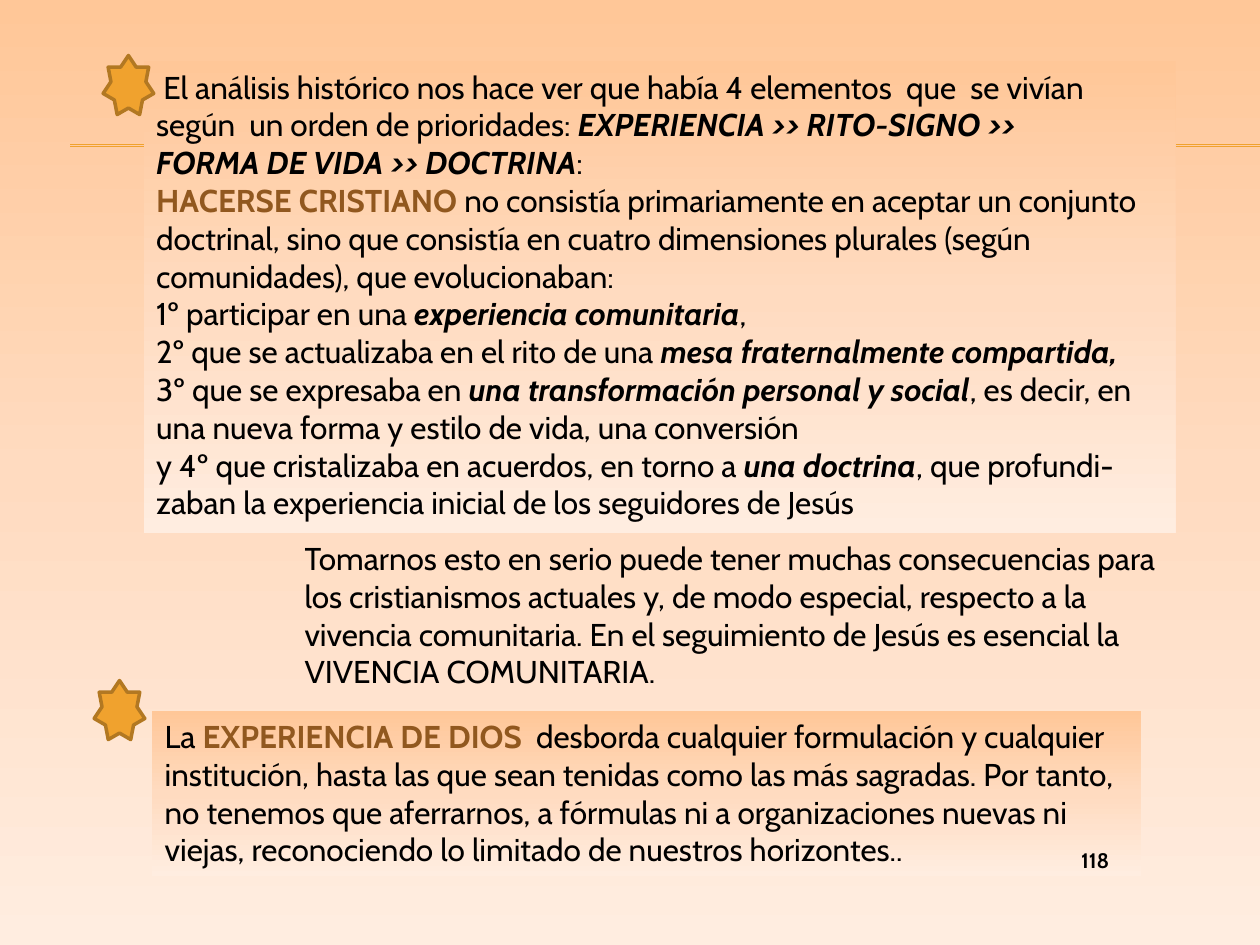
from copy import deepcopy
from dataclasses import dataclass, field

from lxml import etree
from pptx import Presentation
from pptx.dml.color import RGBColor
from pptx.enum import shapes as es, text as et
from pptx.oxml.ns import qn
from pptx.util import Cm, Pt

INK = {"text": "000000", "key": "91581F", "gold": "F0A22E", "edge": "B27822"}
FADE = {0: "FFC798", 0.5: "FFDBC0", 1: "FFEDE0"}


@dataclass
class Run:
    text: str
    form: dict = field(default_factory=dict)


@dataclass
class Box:
    left: float
    top: float
    width: float
    height: float
    paras: list
    fade: bool = False
    align: et.PP_ALIGN = et.PP_ALIGN.LEFT
    grow: bool = True


def rgb(name: str) -> RGBColor:
    return RGBColor.from_string(INK[name])


def strong(text: str) -> Run:
    return Run(text, {"bold": True, "italic": True})


def key(text: str) -> Run:
    return Run(text, {"bold": True, "tint": "key"})


def say(para, text: str, *, size=18, bold=False, italic=False, tint="text") -> None:
    run = para.add_run()
    run.text = text
    font = run.font
    font.name, font.size = "Cabin", Pt(size)
    font.bold, font.italic = bold, italic
    font.color.rgb = rgb(tint)


def blend(fill, node) -> None:
    fill.gradient()
    fill.gradient_angle = 270
    stops = next(node.iter(qn("a:gsLst")))
    stops.insert(1, deepcopy(stops[0]))
    for stop, (spot, tone) in zip(fill.gradient_stops, FADE.items()):
        stop.position = spot
        stop.color.rgb = RGBColor.from_string(tone)


def rule(slide, top: float) -> None:
    line = slide.shapes.add_connector(
        es.MSO_CONNECTOR.STRAIGHT, Cm(1.42), Cm(top), Cm(25.4), Cm(top))
    line.line.color.rgb = rgb("gold")
    line.line.width = Pt(0.75)
    etree.SubElement(line._element.spPr, qn("a:effectLst"))


def star(slide, left: float, top: float) -> None:
    shape = slide.shapes.add_shape(
        es.MSO_SHAPE.STAR_7_POINT, Cm(left), Cm(top), Cm(1.02), Cm(1.19))
    shape.shadow.inherit = False
    shape.fill.solid()
    shape.fill.fore_color.rgb = rgb("gold")
    shape.line.color.rgb = rgb("edge")
    shape.line.width = Pt(2)


def draw(slide, box: Box) -> None:
    area = [Cm(n) for n in (box.left, box.top, box.width, box.height)]
    if box.fade:
        shape = slide.shapes.add_shape(es.MSO_SHAPE.RECTANGLE, *area)
        shape.shadow.inherit = False
        blend(shape.fill, shape._element.spPr)
        shape.line.fill.background()
    else:
        shape = slide.shapes.add_textbox(*area)
    frame = shape.text_frame
    frame.word_wrap = True
    frame.vertical_anchor = et.MSO_ANCHOR.TOP
    if box.grow:
        frame.auto_size = et.MSO_AUTO_SIZE.SHAPE_TO_FIT_TEXT
    for num, runs in enumerate(box.paras):
        para = frame.add_paragraph() if num else frame.paragraphs[0]
        para.alignment = box.align
        for run in runs:
            say(para, run.text, **run.form)


ORDER = Box(2.9, 1.24, 20.8, 9.5, [
    [Run(" El análisis histórico nos hace ver que había 4 elementos  que  se vivían "
         "según  un orden de prioridades: "),
     strong("EXPERIENCIA >> RITO-SIGNO >>")],
    [strong("FORMA DE VIDA >> DOCTRINA"), Run(":")],
    [key("HACERSE CRISTIANO "),
     Run("no consistía primariamente en aceptar un conjunto doctrinal, sino que "
         "consistía en cuatro dimensiones plurales (según comunidades), que "
         "evolucionaban:")],
    [Run("1º participar en una "), strong("experiencia comunitaria"), Run(",")],
    [Run("2º que se actualizaba en el rito de una "),
     strong("mesa fraternalmente compartida,")],
    [Run("3º que se expresaba en "), strong("una transformación personal y social"),
     Run(", es decir, en una nueva forma y estilo de vida, una conversión")],
    [Run("y 4º que cristalizaba en acuerdos, en torno a "), strong("una doctrina"),
     Run(", que profundi-zaban la experiencia inicial de los seguidores de Jesús")],
], fade=True)

CALL = Box(5.89, 10.74, 18.39, 3.33, [[
    Run("Tomarnos esto en serio puede tener muchas consecuencias para los "
        "cristianismos actuales y, de modo especial, respecto a la vivencia "
        "comunitaria. En el seguimiento de Jesús es esencial la VIVENCIA "
        "COMUNITARIA.")]])

GOD = Box(3.07, 14.33, 19.94, 3.33, [[
    Run("La "), key("EXPERIENCIA DE DIOS  "),
    Run("desborda cualquier formulación y cualquier institución, hasta las que "
        "sean tenidas como las más sagradas. Por tanto, no tenemos que aferrarnos, "
        "a fórmulas ni a organizaciones nuevas ni viejas, reconociendo lo limitado "
        "de nuestros horizontes..")]], fade=True)

PAGE = Box(20.5, 16.97, 2.11, 0.69, [[Run("118", {"size": 12, "bold": True})]],
           align=et.PP_ALIGN.RIGHT, grow=False)


def main() -> None:
    deck = Presentation()
    deck.slide_width, deck.slide_height = Cm(25.4), Cm(19.05)
    slide = deck.slides.add_slide(deck.slide_layouts[6])
    blend(slide.background.fill, slide._element)
    for top in (2.92, 2.95):
        rule(slide, top)
    draw(slide, ORDER)
    draw(slide, CALL)
    for left, top in ((2.08, 1.12), (1.9, 13.72)):
        star(slide, left, top)
    draw(slide, GOD)
    draw(slide, PAGE)
    deck.save("out.pptx")


if __name__ == "__main__":
    main()
